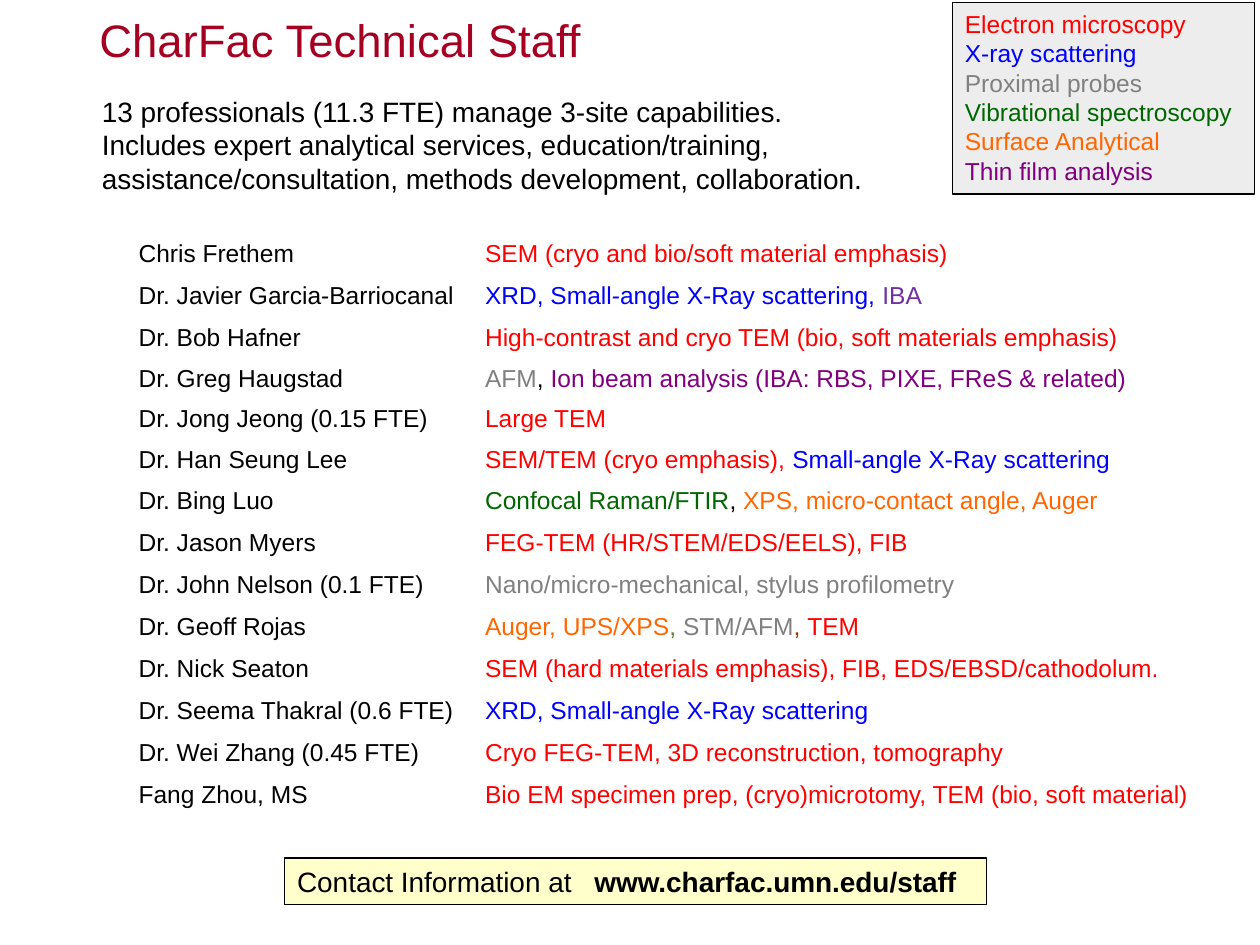
import dataclasses

import pptx
import pptx.dml.color
import pptx.enum.shapes
import pptx.enum.text
import pptx.oxml
import pptx.oxml.ns
import pptx.util

Inches = pptx.util.Inches


@dataclasses.dataclass(frozen=True)
class Theme:
    font: str = "Arial"
    title_size: int = 26
    body_size: int = 16
    list_size: int = 14
    title: str = "A50021"
    text: str = "000000"
    electron: str = "FF0000"
    xray: str = "0000FF"
    probes: str = "808080"
    vibrational: str = "006600"
    surface: str = "FF6600"
    film: str = "800080"
    ion_beam: str = "7030A0"
    olive: str = "548235"
    brown: str = "993300"
    legend_fill: str = "EDEDED"
    contact_fill: str = "FFFFCC"


THEME = Theme()

LEGEND = [
    [("Electron microscopy", THEME.electron)],
    [("X-ray scattering", THEME.xray)],
    [("Proximal probes", THEME.probes)],
    [("Vibrational spectroscopy", THEME.vibrational)],
    [("Surface Analytical", THEME.surface)],
    [("Thin film analysis", THEME.film)],
]

INTRO = [
    "13 professionals (11.3 FTE) manage 3-site capabilities.",
    "Includes expert analytical services, education/training, "
    "assistance/consultation, methods development, collaboration.",
]

# Each person with the coloured spans of their expertise
STAFF = [
    ("Chris Frethem", [("SEM (cryo and bio/soft material emphasis)", THEME.electron)]),
    ("Dr. Javier Garcia-Barriocanal", [("XRD, Small-angle X-Ray scattering, ", THEME.xray),
                                       ("IBA", THEME.ion_beam)]),
    ("Dr. Bob Hafner", [("High-contrast and cryo TEM (bio, soft materials emphasis)", THEME.electron)]),
    ("Dr. Greg Haugstad", [("AFM", THEME.probes), (", ", THEME.text),
                           ("Ion beam analysis (IBA: RBS, PIXE, FReS & related)", THEME.film)]),
    ("Dr. Jong Jeong (0.15 FTE)", [("Large TEM", THEME.electron)]),
    ("Dr. Han Seung Lee", [("SEM/TEM (cryo emphasis), ", THEME.electron),
                           ("Small-angle X-Ray scattering", THEME.xray)]),
    ("Dr. Bing Luo", [("Confocal Raman/FTIR", THEME.vibrational), (", ", THEME.text),
                      ("XPS, micro-contact angle, Auger", THEME.surface)]),
    ("Dr. Jason Myers", [("FEG-TEM (HR/STEM/EDS/EELS), FIB", THEME.electron)]),
    ("Dr. John Nelson (0.1 FTE)", [("Nano/micro-mechanical, stylus profilometry", THEME.probes)]),
    ("Dr. Geoff Rojas", [("Auger, UPS/XPS", THEME.surface), (", ", THEME.olive),
                         ("STM/AFM", THEME.probes), (", ", THEME.brown), ("TEM", THEME.electron)]),
    ("Dr. Nick Seaton", [("SEM (hard materials emphasis), FIB, EDS/EBSD/cathodolum.", THEME.electron)]),
    ("Dr. Seema Thakral (0.6 FTE)", [("XRD, Small-angle X-Ray scattering", THEME.xray)]),
    ("Dr. Wei Zhang (0.45 FTE)", [("Cryo FEG-TEM, 3D reconstruction, tomography", THEME.electron)]),
    ("Fang Zhou, MS", [("Bio EM specimen prep, (cryo)microtomy, TEM (bio, soft material)", THEME.electron)]),
]
TIGHT_ROWS = (3, 4, 5)


def color(value):
    return pptx.dml.color.RGBColor.from_string(value)


def write(frame, lines, size):
    """Fill a text frame with paragraphs made of (text, colour) spans."""
    frame.text = "\n".join("" for _ in lines)
    for paragraph, spans in zip(frame.paragraphs, lines):
        paragraph.alignment = pptx.enum.text.PP_ALIGN.LEFT
        for text, tint in spans:
            span = paragraph.add_run()
            span.text = text
            span.font.name = THEME.font
            span.font.size = pptx.util.Pt(size)
            span.font.color.rgb = color(tint)


def fit_text(box, lines, size):
    frame = box.text_frame
    frame.word_wrap = True
    frame.auto_size = pptx.enum.text.MSO_AUTO_SIZE.SHAPE_TO_FIT_TEXT
    frame.vertical_anchor = pptx.enum.text.MSO_ANCHOR.TOP
    write(frame, lines, size)


def add_text(page, left, top, width, height, lines, size):
    box = page.shapes.add_textbox(Inches(left), Inches(top), Inches(width), Inches(height))
    fit_text(box, lines, size)


def add_panel(page, left, top, width, height, fill, lines, size):
    box = page.shapes.add_shape(pptx.enum.shapes.MSO_SHAPE.RECTANGLE,
                                Inches(left), Inches(top), Inches(width), Inches(height))
    box.shadow.inherit = False
    box.fill.solid()
    box.fill.fore_color.rgb = color(fill)
    box.line.color.rgb = color(THEME.text)
    box.line.width = pptx.util.Pt(0.75)
    fit_text(box, lines, size)
    return box


def add_tab_stop(paragraph, position):
    properties = paragraph._p.get_or_add_pPr()
    stops = pptx.oxml.parse_xml(
        f'<a:tabLst {pptx.oxml.ns.nsdecls("a")}>'
        f'<a:tab pos="{Inches(position)}" algn="l"/></a:tabLst>')
    properties.append(stops)


def add_staff_table(page):
    graphic = page.shapes.add_table(len(STAFF), 2, Inches(1), Inches(1.85),
                                    Inches(8.83), Inches(4.66))
    table = graphic.table
    table.first_row = False
    table.horz_banding = False
    table.columns[0].width = Inches(2.75)
    table.columns[1].width = Inches(6.08)
    for index, (name, expertise) in enumerate(STAFF):
        table.rows[index].height = Inches(0.32 if index in TIGHT_ROWS else 1 / 3)
        for column, spans in enumerate(([(name, THEME.text)], expertise)):
            cell = table.cell(index, column)
            cell.fill.background()
            cell.vertical_anchor = pptx.enum.text.MSO_ANCHOR.MIDDLE
            write(cell.text_frame, [spans], THEME.list_size)


def main():
    deck = pptx.Presentation()
    deck.slide_width = Inches(10)
    deck.slide_height = Inches(7.5)
    page = deck.slides.add_slide(deck.slide_layouts[6])

    # Staff list
    add_staff_table(page)

    # Title and introduction
    add_text(page, 0.69, 0.05, 5.64, 0.54,
             [[("CharFac Technical Staff", THEME.title)]], THEME.title_size)
    add_text(page, 0.71, 0.7, 7.12, 0.91,
             [[(line, THEME.text)] for line in INTRO], THEME.body_size)

    # Contact line, with the address at a tab stop
    contact = add_panel(page, 2.26, 6.81, 5.57, 0.37, THEME.contact_fill,
                        [[("Contact Information at\t", THEME.text),
                          ("www.charfac.umn.edu/staff", THEME.text)]], THEME.body_size)
    paragraph = contact.text_frame.paragraphs[0]
    add_tab_stop(paragraph, 2.36)
    paragraph.runs[1].font.bold = True

    # Colour legend
    add_panel(page, 7.56, 0.02, 2.4, 1.52, THEME.legend_fill, LEGEND, THEME.list_size)

    deck.save("out.pptx")


if __name__ == "__main__":
    main()
